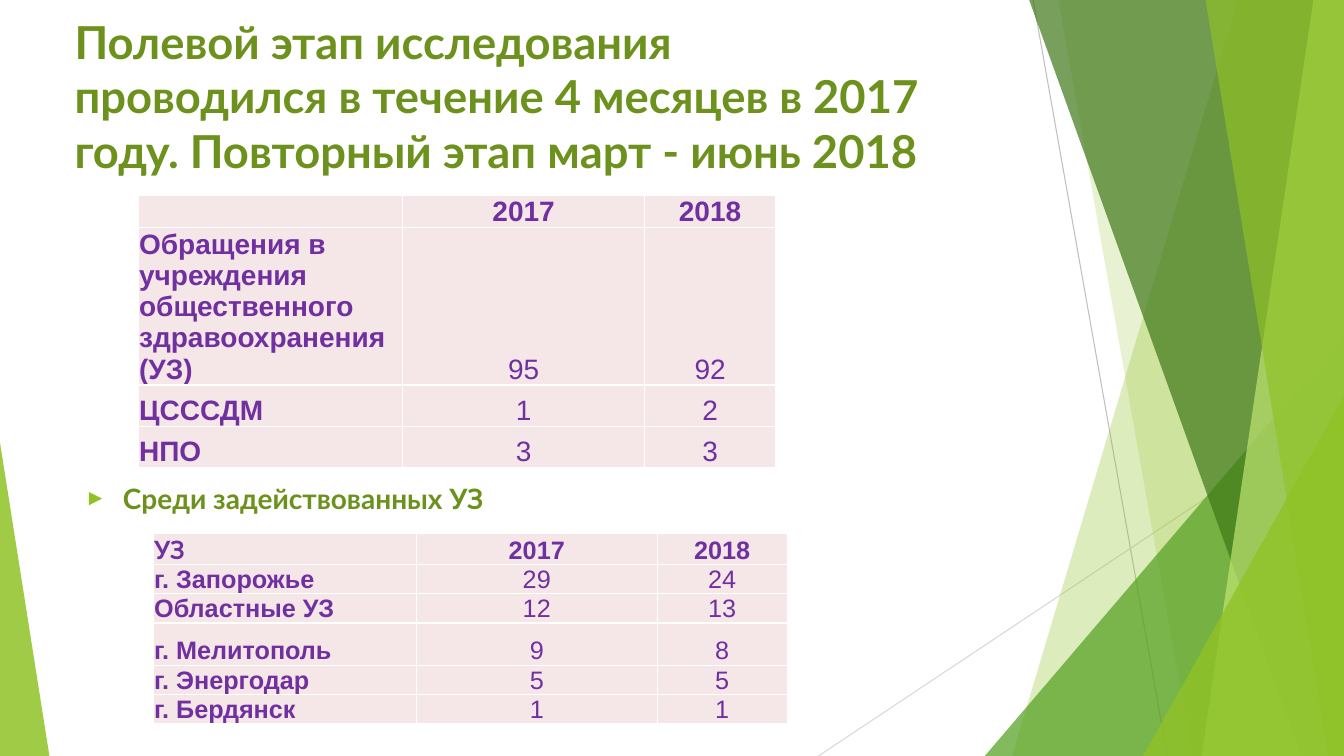
from lxml.etree import SubElement
from pptx import Presentation
from pptx.dml.color import RGBColor
from pptx.enum.shapes import MSO_CONNECTOR as Connector, MSO_SHAPE as Shape
from pptx.enum.text import MSO_ANCHOR as Anchor, MSO_AUTO_SIZE as AutoSize, PP_ALIGN as Align
from pptx.oxml.ns import qn
from pptx.util import Emu, Inches, Pt

COLS, ROWS = 160, 90
GREEN, TITLE_GREEN, PURPLE, PINK, WHITE = "90C226", "6C911C", "7030A0", "F5E7E7", "FFFFFF"


def rgb(value):
    """Turn a hex string into a colour."""
    return RGBColor.from_string(value)


def add_solid(parent, value):
    """Append a solid fill to an XML element."""
    SubElement(SubElement(parent, qn("a:solidFill")), qn("a:srgbClr"), val=value)


class Deck:
    """Style, grid and current slide."""

    heading_font, table_font = "Lato", "Arial"

    def __init__(self):
        """Open a widescreen presentation with one title and content slide."""
        self.prs = Presentation()
        self.prs.slide_width, self.prs.slide_height = Inches(13.333), Inches(7.5)
        self.s = self.prs.slides.add_slide(self.prs.slide_layouts[1])

    def x(self, cols):
        """Convert grid columns to a length."""
        return Emu(round(self.prs.slide_width * cols / COLS))

    def y(self, rows):
        """Convert grid rows to a length."""
        return Emu(round(self.prs.slide_height * rows / ROWS))

    def box(self, left, top, width, height):
        """Convert a grid box to lengths."""
        return self.x(left), self.y(top), self.x(width), self.y(height)

    def style(self, p, font, size, color, bold):
        """Format every run of a paragraph."""
        for r in p.runs:
            r.font.name, r.font.size, r.font.bold = font, Pt(size), bold
            r.font.color.rgb = rgb(color)

    def paint(self, sp, color, opacity):
        """Give a shape a translucent fill without outline or shadow."""
        sp.shadow.inherit = False
        sp.line.fill.background()
        sp.fill.solid()
        sp.fill.fore_color.rgb = rgb(color)
        clr = sp.fill._xPr.find(".//" + qn("a:srgbClr"))
        SubElement(clr, qn("a:alpha"), val=str(opacity * 1000))

    def line(self, x1, y1, x2, y2, color):
        """Draw a thin straight line."""
        ends = self.x(x1), self.y(y1), self.x(x2), self.y(y2)
        c = self.s.shapes.add_connector(Connector.STRAIGHT, *ends)
        c.line.color.rgb, c.line.width = rgb(color), Pt(0.75)
        SubElement(c._element.spPr, qn("a:effectLst"))

    def facet(self, top_x, bottom_x, color, opacity):
        """Draw a full-height facet that reaches the right edge."""
        right, bottom = self.x(COLS), self.y(ROWS)
        fb = self.s.shapes.build_freeform(self.x(top_x), 0)
        fb.add_line_segments([(right, 0), (right, bottom), (self.x(bottom_x), bottom)])
        self.paint(fb.convert_to_shape(), color, opacity)

    def triangle(self, box, apex, color, opacity):
        """Draw a triangle whose apex lies at a share of its width."""
        sp = self.s.shapes.add_shape(Shape.ISOSCELES_TRIANGLE, *self.box(*box))
        sp.adjustments[0] = apex
        self.paint(sp, color, opacity)

    def place(self, sp, box, text, size):
        """Move a placeholder and set its heading text."""
        sp.left, sp.top, sp.width, sp.height = self.box(*box)
        tf = sp.text_frame
        tf.text = text
        tf.word_wrap, tf.auto_size, tf.vertical_anchor = True, AutoSize.NONE, Anchor.TOP
        p = tf.paragraphs[0]
        p.alignment = Align.LEFT
        self.style(p, self.heading_font, size, TITLE_GREEN, True)
        return tf

    def title(self, box, text):
        """Fill the title placeholder."""
        self.place(self.s.shapes.title, box, text, 32.4)

    def bullet(self, box, inset, text):
        """Fill the body placeholder with one bullet set down by an inset."""
        tf = self.place(self.s.placeholders[1], box, text, 20)
        tf.margin_top = self.y(inset)
        p = tf.paragraphs[0]
        p.space_before = Pt(0)
        pPr = p._p.get_or_add_pPr()
        pPr.set("marL", str(Inches(0.38)))
        pPr.set("indent", str(-Inches(0.38)))
        SubElement(SubElement(pPr, qn("a:buClr")), qn("a:srgbClr"), val=GREEN)
        SubElement(pPr, qn("a:buSzPct"), val="80000")
        SubElement(pPr, qn("a:buFont"), typeface=self.table_font)
        SubElement(pPr, qn("a:buChar"), char="►")

    def table(self, left, top, widths, heights, size, rows):
        """Draw a table with bold first row and column."""
        box = self.box(left, top, sum(widths), sum(heights))
        tbl = self.s.shapes.add_table(len(rows), len(widths), *box).table
        for col, width in zip(tbl.columns, widths):
            col.width = self.x(width)
        for i, (height, values) in enumerate(zip(heights, rows)):
            tbl.rows[i].height = self.y(height)
            for j, value in enumerate(values):
                font = self.table_font if i or j else self.heading_font
                self.cell(tbl.cell(i, j), value, font, size, i == 0 or j == 0, j > 0)

    def cell(self, cell, text, font, size, bold, centred):
        """Fill and format one table cell."""
        cell.text = text
        cell.vertical_anchor = Anchor.BOTTOM
        cell.margin_left = cell.margin_right = cell.margin_top = Inches(0.01)
        cell.margin_bottom = 0
        p = cell.text_frame.paragraphs[0]
        p.alignment = Align.CENTER if centred else Align.LEFT
        self.style(p, font, size, PURPLE, bold)
        tcPr = cell._tc.get_or_add_tcPr()
        for side in "LRTB":
            add_solid(SubElement(tcPr, qn(f"a:ln{side}"), w=str(Pt(1))), WHITE)
        cell.fill.solid()
        cell.fill.fore_color.rgb = rgb(PINK)


def main():
    """Build the slide on field stages."""
    d = Deck()
    d.line(123, 0, 138.96, 90, "BFBFBF")
    d.line(160, 48.36, 97.44, 90, "D8D8D8")
    d.facet(147.36, 120.48, GREEN, 30)
    d.facet(126, 141.96, GREEN, 20)
    d.triangle((117.24, 39.96, 42.76, 50.04), 1, "54A021", 72)
    d.facet(122.52, 154.92, "3F7818", 70)
    d.facet(156.36, 143.04, "BFE471", 70)
    d.facet(143.52, 158.16, GREEN, 65)
    d.triangle((136.08, 47.16, 23.92, 42.84), 1, GREEN, 80)
    d.triangle((0, 52.68, 5.88, 37.32), 0, GREEN, 85)
    d.title((7.68, 1.08, 112.8, 17.28),
            "Полевой этап исследования \vпроводился в течение 4 месяцев в 2017 году. "
            "Повторный этап март - июнь 2018")
    d.bullet((8.88, 28.32, 112.8, 50.88), 29, "Среди задействованных УЗ")
    d.table(16.44, 23.28, (31.5, 28.8, 15.6), (3.36, 9.6, 4.92, 4.92), 20, [
        ("", "2017", "2018"),
        ("Обращения в учреждения общественного здравоохранения (УЗ)", "95", "92"),
        ("ЦСССДМ", "1", "2"),
        ("НПО", "3", "3"),
    ])
    d.table(18.24, 63.48, (31.32, 28.68, 15.48), (2.76, 2.76, 2.76, 5.04, 2.76, 2.76), 18, [
        ("УЗ", "2017", "2018"),
        ("г. Запорожье", "29", "24"),
        ("Областные УЗ", "12", "13"),
        ("г. Мелитополь", "9", "8"),
        ("г. Энергодар", "5", "5"),
        ("г. Бердянск", "1", "1"),
    ])
    d.prs.save("out.pptx")


if __name__ == "__main__":
    main()
